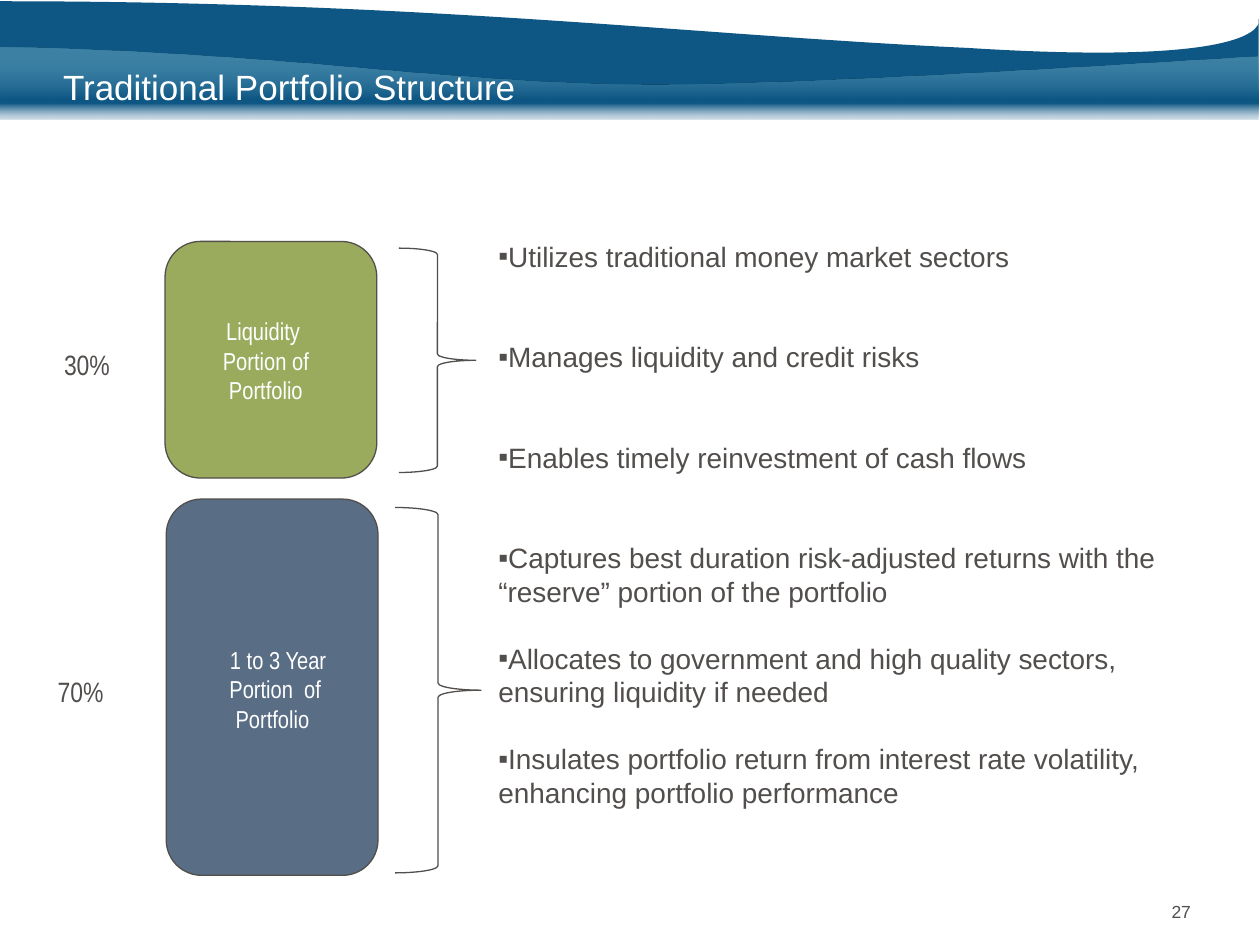
from dataclasses import dataclass

from lxml.etree import SubElement
from pptx import Presentation
from pptx.dml.color import RGBColor
from pptx.enum.shapes import MSO_SHAPE
from pptx.enum.text import MSO_ANCHOR, PP_ALIGN
from pptx.oxml import parse_xml
from pptx.oxml.ns import nsdecls, qn
from pptx.util import Pt

Point = tuple[float, float]
Box = tuple[float, float, float, float]

WHITE, GRAY, BLUE = "FFFFFF", "514E4C", "0E5784"
LINE_PITCH = 19.1


@dataclass
class Tier:
    share: str
    label: str
    fill: str
    box: Box
    brace: Box
    label_box: Box
    share_box: Box


@dataclass
class Bullet:
    text: str
    blank_lines: int


TIERS = [
    Tier("30%", "Liquidity  Portion of Portfolio", "9AAB5D",
         (94.3, 138, 121, 135.2), (228, 141.8, 43.9, 128.2),
         (110.2, 177.1, 83.5, 58.3), (29.5, 195.1, 58.3, 26.6)),
    Tier("70%", " 1 to 3 Year Portion  of Portfolio ", "596E85",
         (95, 285.2, 121, 215), (225.8, 290, 49, 208.8),
         (112.3, 365, 90, 58.3), (25.9, 381.8, 58.3, 26.6)),
]

BULLETS = [
    Bullet("Utilizes traditional money market sectors", 0),
    Bullet("Manages liquidity and credit risks", 2),
    Bullet("Enables timely reinvestment of cash flows", 2),
    Bullet("Captures best duration risk-adjusted returns with the “reserve” "
           "portion of the portfolio", 2),
    Bullet("Allocates to government and high quality sectors, ensuring "
           "liquidity if needed", 1),
    Bullet("Insulates portfolio return from interest rate volatility, "
           "enhancing portfolio performance", 1),
]

# Each wave is a chain of cubic curves: a start, then two controls and an end per curve.
BACK_WAVE = [(0, 0.7), (244.8, 0.7), (396.7, 20.2), (553, 27.4),
             (735.8, 38.9), (718.6, 9.4), (719.3, 10.8)]
FRONT_WAVE = [(719.3, 32.4), (373, 53.3), (356.4, 50.4), (239, 41.8),
              (213.8, 39.6), (83.5, 27.4), (0, 27.4)]
BAND_BOTTOM = 68.2

GRADIENT = [(0, "7AB8CF", 43), (72, BLUE, 100), (77, BLUE, 100), (97, WHITE, 75)]


def rgb(color: str) -> RGBColor:
    return RGBColor.from_string(color)


def bend(sp, curves: int) -> None:
    """Turn the first line segments, three at a time, into cubic curves."""
    lines = list(sp.element.iter(qn("a:lnTo")))
    for i in range(0, 3 * curves, 3):
        cubic = parse_xml(f'<a:cubicBezTo {nsdecls("a")}/>')
        lines[i].addprevious(cubic)
        for line in lines[i:i + 3]:
            cubic.append(line[0])
            line.getparent().remove(line)


def add_wave(s, chain: list[Point]):
    """Draw the area between a wave and the bottom of the header band."""
    outline = chain + [(chain[-1][0], BAND_BOTTOM), (chain[0][0], BAND_BOTTOM)]
    start, *rest = [(Pt(x), Pt(y)) for x, y in outline]
    builder = s.shapes.build_freeform(*start, scale=1.0)
    builder.add_line_segments(rest, close=True)
    sp = builder.convert_to_shape()
    bend(sp, len(chain) // 3)
    sp.shadow.inherit = False
    sp.line.fill.background()
    sp.fill.solid()
    sp.fill.fore_color.rgb = rgb(BLUE)
    return sp


def fade(sp) -> None:
    """Replace a solid fill by the translucent vertical gradient."""
    stops = "".join(
        f'<a:gs pos="{pos * 1000}"><a:srgbClr val="{color}">'
        f'<a:alpha val="{alpha * 1000}"/></a:srgbClr></a:gs>'
        for pos, color, alpha in GRADIENT)
    gradient = parse_xml(
        f'<a:gradFill {nsdecls("a")} rotWithShape="1"><a:gsLst>{stops}</a:gsLst>'
        '<a:lin ang="5400000" scaled="0"/></a:gradFill>')
    solid = sp.element.spPr.find(qn("a:solidFill"))
    solid.getparent().replace(solid, gradient)


def add_outlined(s, kind: MSO_SHAPE, box: Box, adjustments: list[float],
                 fill: str | None = None) -> None:
    sp = s.shapes.add_shape(kind, *map(Pt, box))
    sp.shadow.inherit = False
    for i, value in enumerate(adjustments):
        sp.adjustments[i] = value
    if fill:
        sp.fill.solid()
        sp.fill.fore_color.rgb = rgb(fill)
    else:
        sp.fill.background()
    sp.line.color.rgb = rgb(GRAY)
    sp.line.width = Pt(0.75)


def style(p, size: float, font: str, color: str, align=PP_ALIGN.LEFT) -> None:
    p.alignment = align
    for r in p.runs:
        r.font.size = Pt(size)
        r.font.name = font
        r.font.color.rgb = rgb(color)


def add_text(s, box: Box, text: str, size: float, font: str, color: str,
             align=PP_ALIGN.LEFT) -> None:
    tf = s.shapes.add_textbox(*map(Pt, box)).text_frame
    tf.word_wrap = True
    tf.text = text
    style(tf.paragraphs[0], size, font, color, align)


def add_bullets(s, box: Box, bullets: list[Bullet]) -> None:
    tf = s.shapes.add_textbox(*map(Pt, box)).text_frame
    tf.word_wrap = True
    tf.margin_left = tf.margin_top = tf.margin_right = 0
    tf.text = "\n".join(bullet.text for bullet in bullets)
    for p, bullet in zip(tf.paragraphs, bullets):
        p.space_before = Pt(bullet.blank_lines * LINE_PITCH)
        pPr = p._p.get_or_add_pPr()
        SubElement(pPr, qn("a:buFont"), typeface="Arial")
        SubElement(pPr, qn("a:buChar"), char="▪")
        style(p, 16, "Arial", GRAY)


def set_title(s, text: str) -> None:
    title = s.shapes.title
    s.shapes.element.append(title.element)  # in front of the header waves
    title.left, title.top, title.width, title.height = map(Pt, (36, 0, 648, 64.8))
    tf = title.text_frame
    tf.text = text
    tf.margin_left = 0
    tf.vertical_anchor = MSO_ANCHOR.BOTTOM
    style(tf.paragraphs[0], 20, "Arial", WHITE)


def main() -> None:
    prs = Presentation()
    prs.slide_width, prs.slide_height = Pt(720), Pt(540)
    s = prs.slides.add_slide(prs.slide_layouts[5])

    add_wave(s, BACK_WAVE)
    fade(add_wave(s, FRONT_WAVE))
    set_title(s, "Traditional Portfolio Structure")
    add_bullets(s, (284.8, 136.8, 414.7, 384.5), BULLETS)

    for tier in TIERS:
        add_outlined(s, MSO_SHAPE.ROUNDED_RECTANGLE, tier.box, [0.167], tier.fill)
    for tier in TIERS:
        add_outlined(s, MSO_SHAPE.RIGHT_BRACE, tier.brace, [0.083, 0.5])
    for tier in TIERS:
        add_text(s, tier.label_box, tier.label, 14, "Arial Narrow", WHITE, PP_ALIGN.CENTER)
    for tier in TIERS:
        add_text(s, tier.share_box, tier.share, 16, "Arial Narrow", GRAY)

    add_text(s, (519.8, 511.2, 167.8, 28.8), "27", 10, "Arial", GRAY, PP_ALIGN.RIGHT)
    prs.save("out.pptx")


if __name__ == "__main__":
    main()
